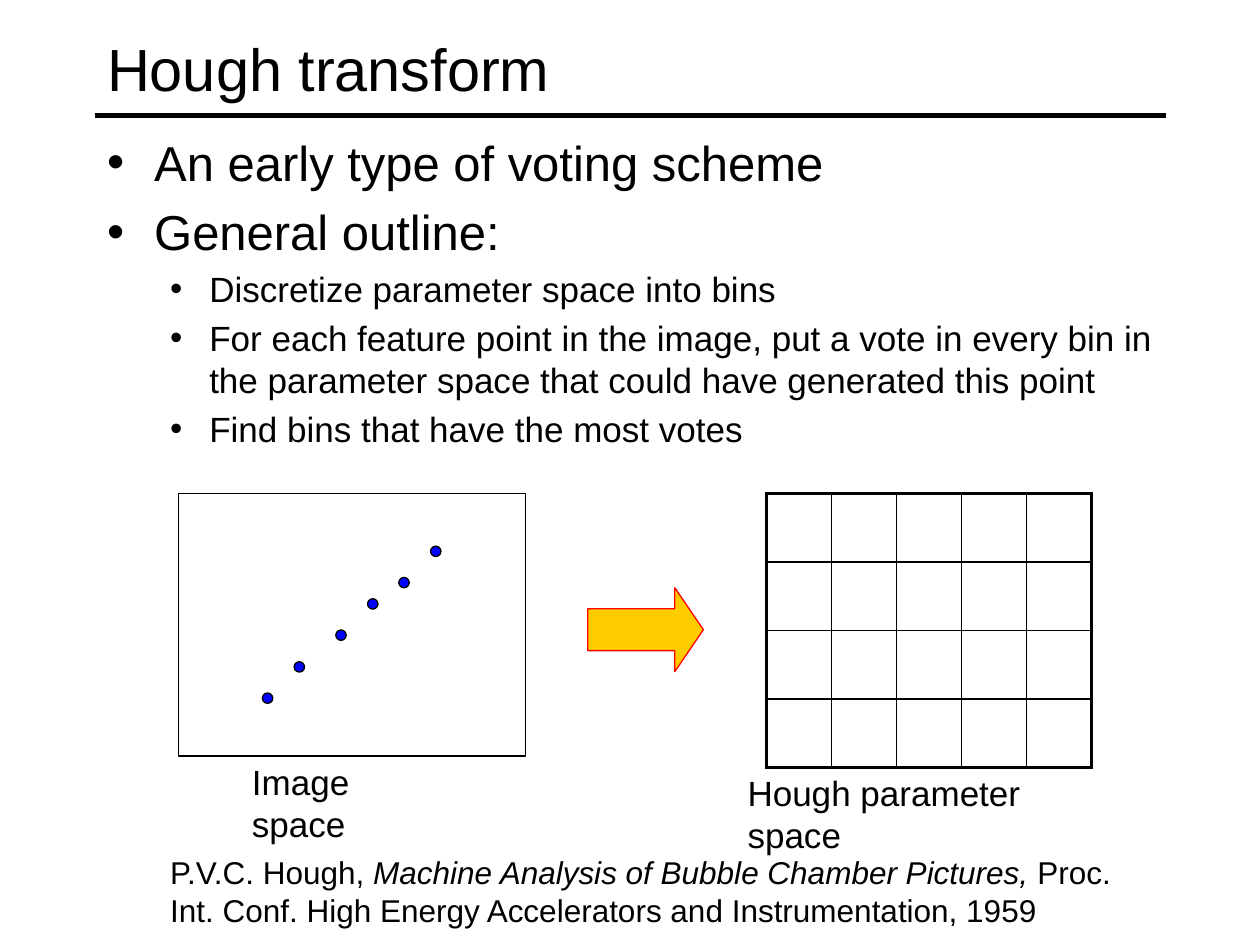
from dataclasses import dataclass

from lxml.etree import SubElement
from pptx import Presentation
from pptx.dml.color import RGBColor
from pptx.enum.shapes import MSO_CONNECTOR, MSO_SHAPE
from pptx.enum.text import MSO_ANCHOR
from pptx.oxml.ns import qn
from pptx.util import Cm, Pt


@dataclass(frozen=True)
class Theme:
    font: str = "Arial"
    ink: str = "000000"
    dot: str = "0000FF"
    arrow: str = "FFCC00"
    arrow_edge: str = "FF0000"
    title: float = 34
    point: float = 28
    detail: float = 20
    citation: float = 18
    rule: float = 3
    outline: float = 0.75
    grid: float = 1
    frame: float = 2.25


THEME = Theme()

LEVELS = (
    {"size": THEME.point, "indent": 0.95, "hanging": 0.95, "before": 6.2},
    {"size": THEME.detail, "indent": 2.06, "hanging": 0.79, "before": 4},
)
OUTLINE = (
    (0, "An early type of voting scheme"),
    (0, "General outline:"),
    (1, "Discretize parameter space into bins"),
    (1, "For each feature point in the image, put a vote in every bin "
        "in the parameter space that could have generated this point"),
    (1, "Find bins that have the most votes"),
)
CITATION = (
    ("P.V.C. Hough, ", False),
    ("Machine Analysis of Bubble Chamber Pictures,", True),
    (" Proc. Int. Conf. High Energy Accelerators and Instrumentation, 1959", False),
)
FEATURE_POINTS = (
    (5.29, 13.97), (5.93, 13.34), (6.77, 12.7),
    (7.41, 12.07), (8.04, 11.64), (8.68, 11.01),
)


def apply_format(target, values):
    for attribute, value in values.items():
        setattr(target, attribute, value)


def lengths(*values):
    return [Cm(value) for value in values]


def add_run(paragraph, wording, size, italic=False):
    run = paragraph.add_run()
    run.text = wording
    apply_format(run.font, {"name": THEME.font, "size": Pt(size), "italic": italic})
    run.font.color.rgb = RGBColor.from_string(THEME.ink)


def add_text_frame(slide, place, anchor=MSO_ANCHOR.TOP):
    frame = slide.shapes.add_textbox(*lengths(*place)).text_frame
    apply_format(frame, {"word_wrap": True, "vertical_anchor": anchor})
    return frame


def add_label(slide, place, parts, size, anchor=MSO_ANCHOR.TOP):
    paragraph = add_text_frame(slide, place, anchor).paragraphs[0]
    for wording, italic in parts:
        add_run(paragraph, wording, size, italic)


def add_outline(slide, place):
    frame = add_text_frame(slide, place)
    for number, (depth, wording) in enumerate(OUTLINE):
        level = LEVELS[depth]
        paragraph = frame.add_paragraph() if number else frame.paragraphs[0]
        apply_format(paragraph, {"level": depth, "space_before": Pt(level["before"])})
        add_run(paragraph, wording, level["size"])
        properties = paragraph._p.get_or_add_pPr()
        properties.set("marL", str(Cm(level["indent"])))
        properties.set("indent", str(-Cm(level["hanging"])))
        SubElement(properties, qn("a:buFont"), typeface=THEME.font)
        SubElement(properties, qn("a:buChar"), char="•")


def add_rule(slide, left, right, height):
    rule = slide.shapes.add_connector(
        MSO_CONNECTOR.STRAIGHT, *lengths(left, height, right, height))
    rule.line.color.rgb = RGBColor.from_string(THEME.ink)
    rule.line.width = Pt(THEME.rule)
    SubElement(rule._element.spPr, qn("a:effectLst"))


def add_figure(slide, kind, place, edge, fill=None):
    figure = slide.shapes.add_shape(kind, *lengths(*place))
    figure.shadow.inherit = False
    figure.line.color.rgb = RGBColor.from_string(edge)
    figure.line.width = Pt(THEME.outline)
    if fill:
        figure.fill.solid()
        figure.fill.fore_color.rgb = RGBColor.from_string(fill)
    else:
        figure.fill.background()
    return figure


def add_border(cell, side, width):
    properties = cell._tc.get_or_add_tcPr()
    border = SubElement(properties, qn(f"a:ln{side}"), w=str(Pt(width)))
    paint = SubElement(border, qn("a:solidFill"))
    SubElement(paint, qn("a:srgbClr"), val=THEME.ink)


def add_bins(slide, left, top, rows, columns, bin_width, bin_height):
    place = lengths(left, top, columns * bin_width, rows * bin_height)
    bins = slide.shapes.add_table(rows, columns, *place).table
    apply_format(bins, {"first_row": False, "horz_banding": False})
    for row in range(rows):
        for column in range(columns):
            cell = bins.cell(row, column)
            on_frame = {
                "L": column == 0, "R": column == columns - 1,
                "T": row == 0, "B": row == rows - 1,
            }
            for side, outer in on_frame.items():
                add_border(cell, side, THEME.frame if outer else THEME.grid)
            cell.fill.background()


def main():
    presentation = Presentation()
    apply_format(presentation, {"slide_width": Cm(25.4), "slide_height": Cm(19.05)})
    slide = presentation.slides.add_slide(presentation.slide_layouts[6])

    add_rule(slide, 1.91, 23.5, 2.33)
    add_label(slide, (1.91, 0.21, 21.59, 2.33), [("Hough transform", False)],
              THEME.title, MSO_ANCHOR.MIDDLE)
    add_outline(slide, (1.91, 2.54, 21.59, 14.6))
    add_label(slide, (3.18, 17.07, 19.81, 1.78), CITATION,
              THEME.citation, MSO_ANCHOR.MIDDLE)

    add_figure(slide, MSO_SHAPE.RECTANGLE, (3.6, 9.95, 6.99, 5.29), THEME.ink)
    arrow = add_figure(slide, MSO_SHAPE.RIGHT_ARROW, (11.85, 11.85, 2.33, 1.69),
                       THEME.arrow_edge, THEME.arrow)
    arrow.adjustments[1] = 0.34
    add_bins(slide, 15.45, 9.95, 4, 5, 1.31, 1.38)
    for left, top in FEATURE_POINTS:
        add_figure(slide, MSO_SHAPE.OVAL, (left, top, 0.21, 0.21), THEME.ink, THEME.dot)

    add_label(slide, (4.83, 15.2, 4.5, 1.1), [("Image space", False)], THEME.detail)
    add_label(slide, (14.82, 15.42, 8, 1.1), [("Hough parameter space", False)],
              THEME.detail)

    presentation.save("out.pptx")


if __name__ == "__main__":
    main()
